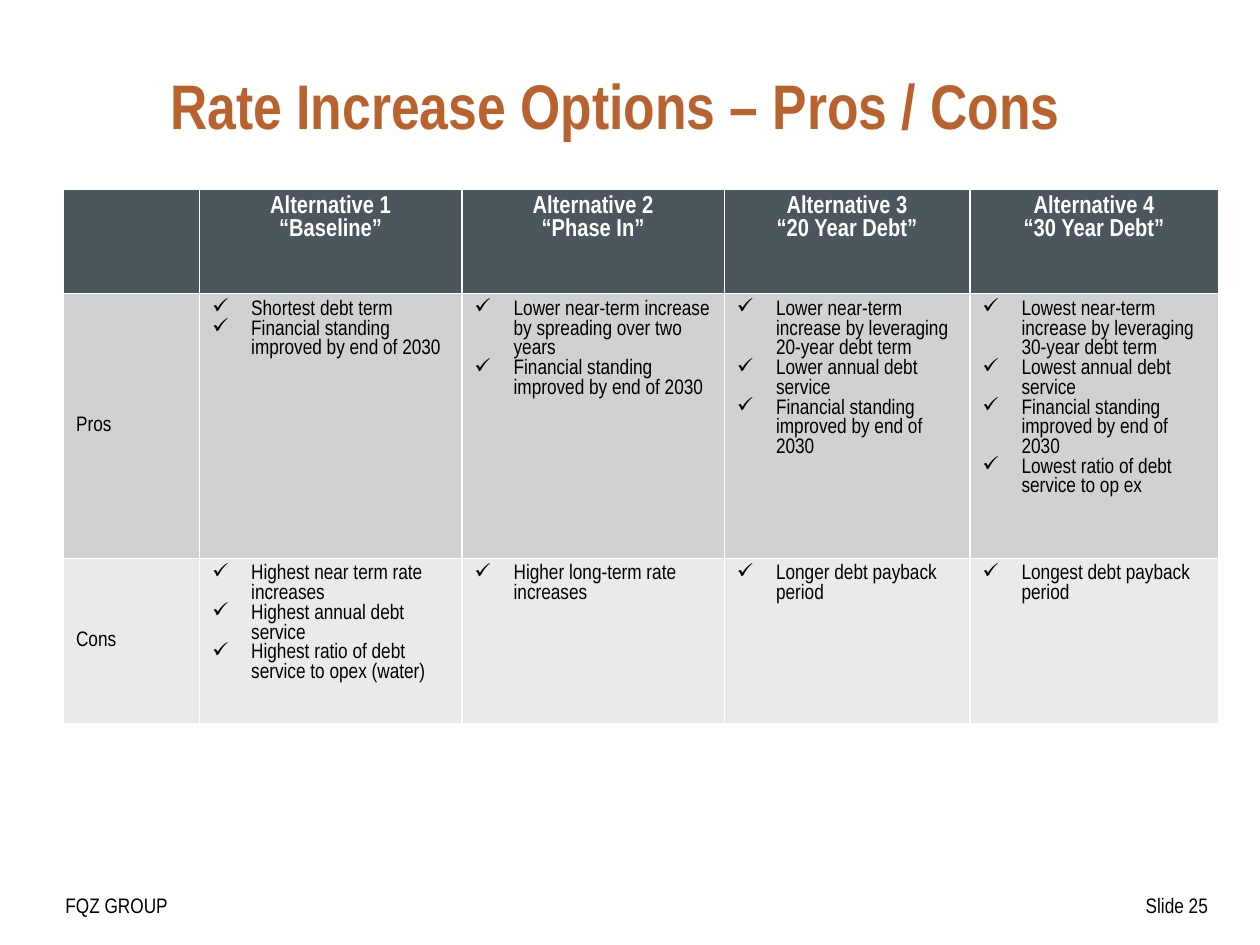
from pptx import Presentation as Deck
from pptx.dml.color import RGBColor as Color
from pptx.enum.text import MSO_ANCHOR as Anchor, PP_ALIGN as Align
from pptx.oxml.ns import qn
from pptx.util import Cm, Pt
from lxml.etree import SubElement as Sub

RUST = Color(0xB8, 0x63, 0x2E)
SLATE = Color(0x4B, 0x57, 0x5D)
GREY = Color(0xD0, 0xD1, 0xD2)
PALE = Color(0xE9, 0xEA, 0xEA)
WHITE = Color(0xFF, 0xFF, 0xFF)
BLACK = Color(0, 0, 0)

COLS = [2.74, 5.29, 5.29, 4.95, 5.01]
ROWS = [2.1, 4.62, 3.33]
STAND = "Financial standing improved by end of 2030"
HEADS = [
    ["Alternative 1", "“Baseline”"],
    ["Alternative 2", "“Phase In”"],
    ["Alternative 3", "“20 Year Debt”"],
    ["Alternative 4", "“30 Year Debt”"],
]
PROS = [
    ["Shortest debt term", STAND],
    ["Lower near-term increase by spreading over two years", STAND],
    ["Lower near-term increase by leveraging 20-year debt term",
     "Lower annual debt service", STAND],
    ["Lowest near-term increase by leveraging 30-year debt term",
     "Lowest annual debt service", STAND,
     "Lowest ratio of debt service to op ex"],
]
CONS = [
    ["Highest near term rate increases", "Highest annual debt service",
     "Highest ratio of debt service to opex (water)"],
    ["Higher long-term rate increases"],
    ["Longer debt payback period"],
    ["Longest debt payback period"],
]


def write(frame, lines, font="Arial Narrow", size=12, color=BLACK,
          bold=False, align=Align.LEFT, mark=None):
    for i, line in enumerate(lines):
        para = frame.paragraphs[0] if i == 0 else frame.add_paragraph()
        para.alignment = align
        run = para.add_run()
        run.text = line
        run.font.name = font
        run.font.size = Pt(size)
        run.font.bold = bold
        run.font.color.rgb = color
        if mark:
            props = para._p.get_or_add_pPr()
            props.set("marL", str(Cm(0.79)))
            props.set("indent", str(-Cm(0.79)))
            Sub(props, qn("a:buChar")).set("char", mark)


class Page:
    def __init__(self, deck):
        self.slide = deck.slides.add_slide(deck.slide_layouts[5])

    def title(self, text, x, y, w, h):
        shape = self.slide.shapes.title
        shape.left, shape.top, shape.width, shape.height = map(Cm, (x, y, w, h))
        shape.text_frame.vertical_anchor = Anchor.MIDDLE
        write(shape.text_frame, [text], size=36, color=RUST, bold=True)

    def label(self, text, x, y, w, h, align=Align.LEFT):
        box = self.slide.shapes.add_textbox(*map(Cm, (x, y, w, h)))
        box.text_frame.word_wrap = True
        write(box.text_frame, [text], align=align)

    def fill(self, cell, back, lines, **form):
        cell.fill.solid()
        cell.fill.fore_color.rgb = back
        write(cell.text_frame, lines, **form)

    def table(self, x, y):
        size = map(Cm, (x, y, sum(COLS), sum(ROWS)))
        grid = self.slide.shapes.add_table(len(ROWS), len(COLS), *size).table
        for col, width in zip(grid.columns, COLS):
            col.width = Cm(width)
        for row, height in zip(grid.rows, ROWS):
            row.height = Cm(height)
        self.fill(grid.cell(0, 0), SLATE, [])
        for c, lines in enumerate(HEADS, 1):
            self.fill(grid.cell(0, c), SLATE, lines, size=14, color=WHITE,
                      bold=True, align=Align.CENTER)
        body = [("Pros", GREY, PROS), ("Cons", PALE, CONS)]
        for r, (name, back, lists) in enumerate(body, 1):
            side = grid.cell(r, 0)
            side.vertical_anchor = Anchor.MIDDLE
            self.fill(side, back, [name])
            for c, lines in enumerate(lists, 1):
                self.fill(grid.cell(r, c), back, lines, mark="✓")


def main():
    deck = Deck()
    deck.slide_width, deck.slide_height = Cm(25.4), Cm(19.05)
    page = Page(deck)
    page.label("Slide 25", 22.3, 17.86, 2.3, 0.76, Align.RIGHT)
    page.label("FQZ GROUP", 1.07, 17.86, 3.6, 0.76)
    page.title("Rate Increase Options – Pros / Cons", 3.18, 0.84, 20.95, 2.54)
    page.table(1.28, 3.82)
    deck.save("out.pptx")


if __name__ == "__main__":
    main()
